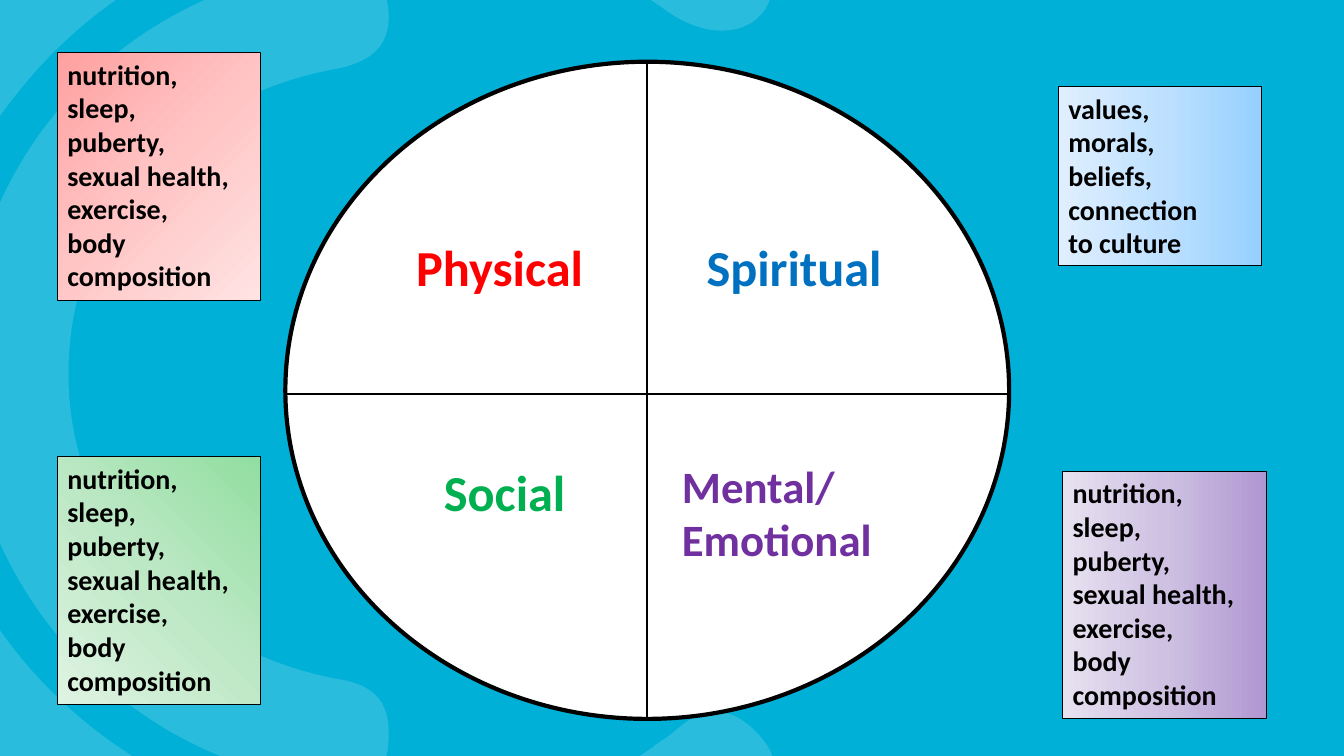
from copy import deepcopy

from pptx import Presentation
from pptx.dml.color import RGBColor
from pptx.enum.shapes import MSO_CONNECTOR, MSO_SHAPE
from pptx.enum.text import MSO_ANCHOR, MSO_AUTO_SIZE, PP_ALIGN
from pptx.oxml.ns import qn
from pptx.util import Pt
from lxml import etree

OVAL, RECTANGLE = MSO_SHAPE.OVAL, MSO_SHAPE.RECTANGLE
STRAIGHT = MSO_CONNECTOR.STRAIGHT
LEFT, TOP = PP_ALIGN.LEFT, MSO_ANCHOR.TOP
GROW = MSO_AUTO_SIZE.SHAPE_TO_FIT_TEXT

FONT = "Calibri"
BLANK_LAYOUT = 6
NO_BREAK_SPACE = chr(160)

BACKDROP = RGBColor(0x00, 0xB0, 0xD7)
WHITE = RGBColor(0xFF, 0xFF, 0xFF)
BLACK = RGBColor(0x00, 0x00, 0x00)
RED = RGBColor(0xFF, 0x00, 0x00)
BLUE = RGBColor(0x00, 0x70, 0xC0)
GREEN = RGBColor(0x00, 0xB0, 0x50)
PURPLE = RGBColor(0x70, 0x30, 0xA0)
RED_FADE = (RGBColor(0xFF, 0xA0, 0xA0), RGBColor(0xFF, 0xC5, 0xC5), RGBColor(0xFF, 0xE3, 0xE3))
GREEN_FADE = (RGBColor(0x91, 0xDE, 0xA0), RGBColor(0xBD, 0xE8, 0xC5), RGBColor(0xDF, 0xF3, 0xE3))
BLUE_FADE = (RGBColor(0x96, 0xD0, 0xFF), RGBColor(0xBF, 0xE1, 0xFF), RGBColor(0xE0, 0xEF, 0xFF))
PURPLE_FADE = (RGBColor(0xB1, 0x97, 0xD2), RGBColor(0xCE, 0xC1, 0xE2), RGBColor(0xE7, 0xE1, 0xF0))

# Background bands: a start point, then cubic curves (two controls and an end)
OUTER_BAND = ((-136, 243), [
    (-128, 109), (-59, -14), (86, -88), (233, -161), (377, -148), (514, -58),
    (531, -46), (554, -35), (552, -11), (550, 22), (513, 33), (478, 9),
    (325, -100), (125, -76), (12, 67), (-89, 193), (-79, 374), (32, 489),
    (147, 608), (329, 627), (466, 534), (470, 530), (477, 527), (481, 523),
    (503, 503), (523, 503), (544, 527), (566, 554), (544, 570), (525, 582),
    (418, 662), (299, 687), (168, 653), (-12, 607), (-135, 447), (-136, 243)])
INNER_BAND = ((-26, 268), [
    (-26, 122), (74, 4), (220, -23), (243, -27), (269, -35), (276, -2),
    (282, 27), (272, 44), (236, 50), (123, 72), (48, 162), (49, 268),
    (49, 374), (126, 463), (241, 485), (274, 490), (280, 508), (277, 535),
    (272, 567), (247, 561), (225, 558), (84, 539), (-26, 414), (-26, 268)])

BODY_TOPICS = ["nutrition,", "sleep,", "puberty,", "sexual health,", "exercise,", "body composition"]
# "to culture" stays together on one line
SPIRIT_TOPICS = ["values,", "morals,", "beliefs,", f"connection to{NO_BREAK_SPACE}culture"]

# Quadrant labels: lines, size, colour, offset from the wheel's box, width and height
QUADRANTS = [
    (["Physical"], 36, RED, (86.4, 121), (151.2, 51)),
    (["Spiritual"], 36, BLUE, (293.8, 121), (144, 51)),
    (["Social"], 36, GREEN, (106.2, 282), (131.8, 51)),
    (["Mental/", "Emotional"], 32, PURPLE, (276.2, 279.7), (184.3, 85)),
]
# Topic cards: lines, fade, clockwise fade angle, box
CARDS = [
    (BODY_TOPICS, RED_FADE, 45, (41, 37.4, 145, 177.1)),
    (BODY_TOPICS, GREEN_FADE, 135, (41, 326, 145, 177.1)),
    (SPIRIT_TOPICS, BLUE_FADE, 180, (756, 61.7, 145, 128.2)),
    (BODY_TOPICS, PURPLE_FADE, 180, (759, 336.4, 145.4, 177.1)),
]
WHEEL_BOX = (203.8, 44.1, 517, 469.4)


def add_band(slide, start, points):
    builder = slide.shapes.build_freeform(Pt(start[0]), Pt(start[1]))
    builder.add_line_segments([(Pt(x), Pt(y)) for x, y in points], close=True)
    band = builder.convert_to_shape()
    band.shadow.inherit = False
    band.fill.solid()
    band.fill.fore_color.rgb = WHITE
    band.line.fill.background()
    colour = band._element.spPr.find(qn("a:solidFill")).find(qn("a:srgbClr"))
    etree.SubElement(colour, qn("a:alpha")).set("val", "16000")

    # Every three points become one cubic curve
    segments = list(band._element.iter(qn("a:lnTo")))
    for first in range(0, len(segments), 3):
        curve = etree.Element(qn("a:cubicBezTo"))
        segments[first].addprevious(curve)
        for segment in segments[first:first + 3]:
            curve.append(segment[0])
            segment.getparent().remove(segment)


def write_lines(frame, lines, size, colour):
    frame.word_wrap = True
    frame.auto_size = GROW
    frame.vertical_anchor = TOP
    for index, line in enumerate(lines):
        paragraph = frame.add_paragraph() if index else frame.paragraphs[0]
        paragraph.alignment = LEFT
        run = paragraph.add_run()
        run.text = line
        run.font.name = FONT
        run.font.size = Pt(size)
        run.font.bold = True
        run.font.color.rgb = colour


def add_divider(slide, x1, y1, x2, y2):
    divider = slide.shapes.add_connector(STRAIGHT, Pt(x1), Pt(y1), Pt(x2), Pt(y2))
    divider.line.color.rgb = BLACK
    divider.line.width = Pt(1.5)
    etree.SubElement(divider._element.spPr, qn("a:effectLst"))


def add_wheel(slide, box):
    left, top, width, height = box
    wheel = slide.shapes.add_shape(OVAL, *map(Pt, box))
    wheel.shadow.inherit = False
    wheel.fill.solid()
    wheel.fill.fore_color.rgb = WHITE
    wheel.line.color.rgb = BLACK
    wheel.line.width = Pt(3)

    # Dividers
    middle_x, middle_y = left + width / 2, top + height / 2 + 2.4
    add_divider(slide, middle_x, top, middle_x, top + height)
    add_divider(slide, left, middle_y, left + width, middle_y)

    # Quadrant labels
    for lines, size, colour, (dx, dy), (label_width, label_height) in QUADRANTS:
        label = slide.shapes.add_textbox(Pt(left + dx), Pt(top + dy), Pt(label_width), Pt(label_height))
        write_lines(label.text_frame, lines, size, colour)


def add_card(slide, lines, fade, angle, box):
    card = slide.shapes.add_shape(RECTANGLE, *map(Pt, box))
    card.shadow.inherit = False
    card.line.color.rgb = BLACK
    card.line.width = Pt(0.5)

    # Three-stop fade
    card.fill.gradient()
    card.fill.gradient_angle = 360 - angle
    stop_list = card._element.spPr.find(qn("a:gradFill")).find(qn("a:gsLst"))
    stop_list.append(deepcopy(stop_list[0]))
    for index, (stop, colour) in enumerate(zip(card.fill.gradient_stops, fade)):
        stop.position = index / 2
        stop.color.rgb = colour

    write_lines(card.text_frame, lines, 20, BLACK)


def main():
    deck = Presentation()
    deck.slide_width, deck.slide_height = Pt(960), Pt(540)
    slide = deck.slides.add_slide(deck.slide_layouts[BLANK_LAYOUT])

    # Background
    slide.background.fill.solid()
    slide.background.fill.fore_color.rgb = BACKDROP
    for band in (OUTER_BAND, INNER_BAND):
        add_band(slide, *band)

    # Health wheel and its topic cards
    add_wheel(slide, WHEEL_BOX)
    for card in CARDS:
        add_card(slide, *card)

    deck.save("out.pptx")


if __name__ == "__main__":
    main()
